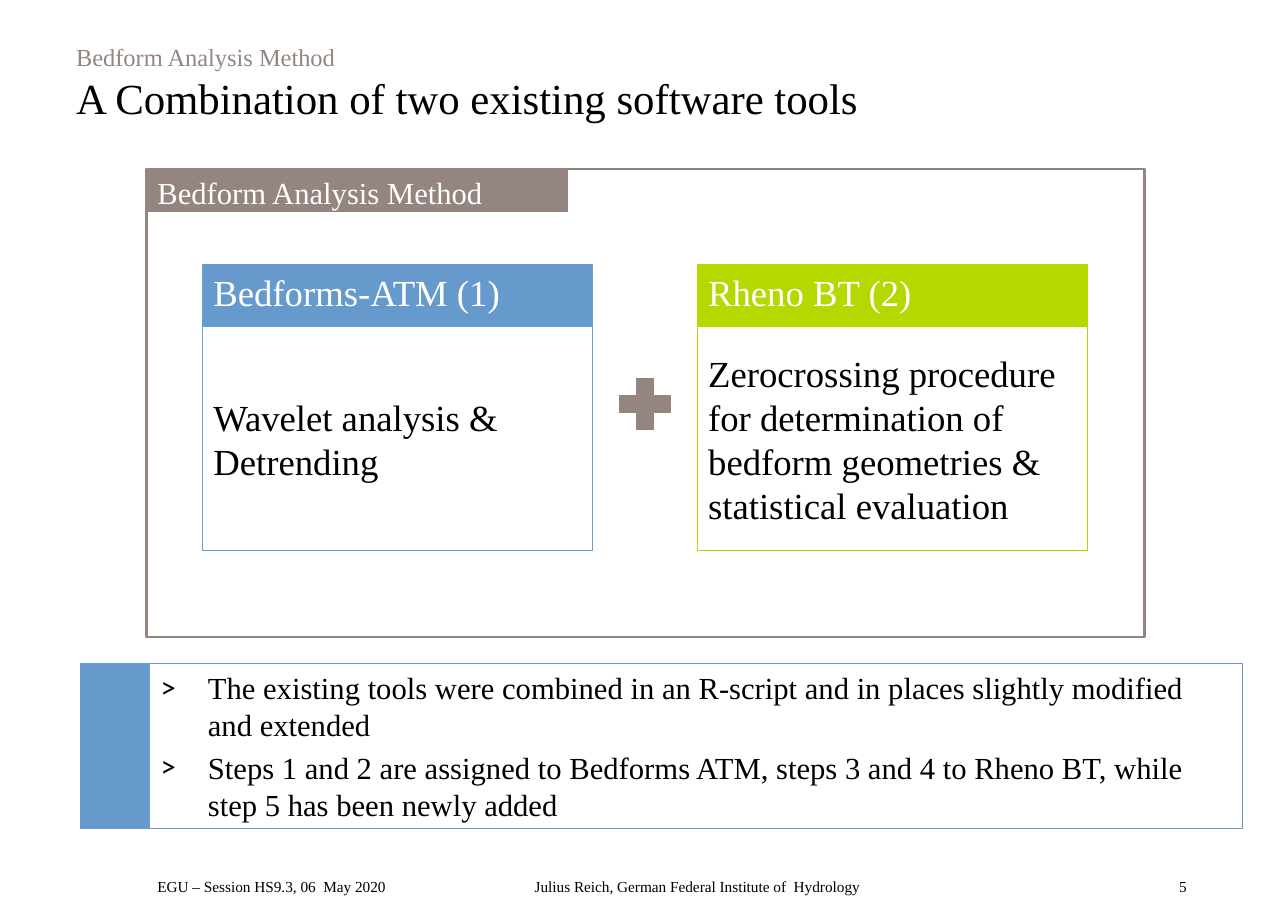
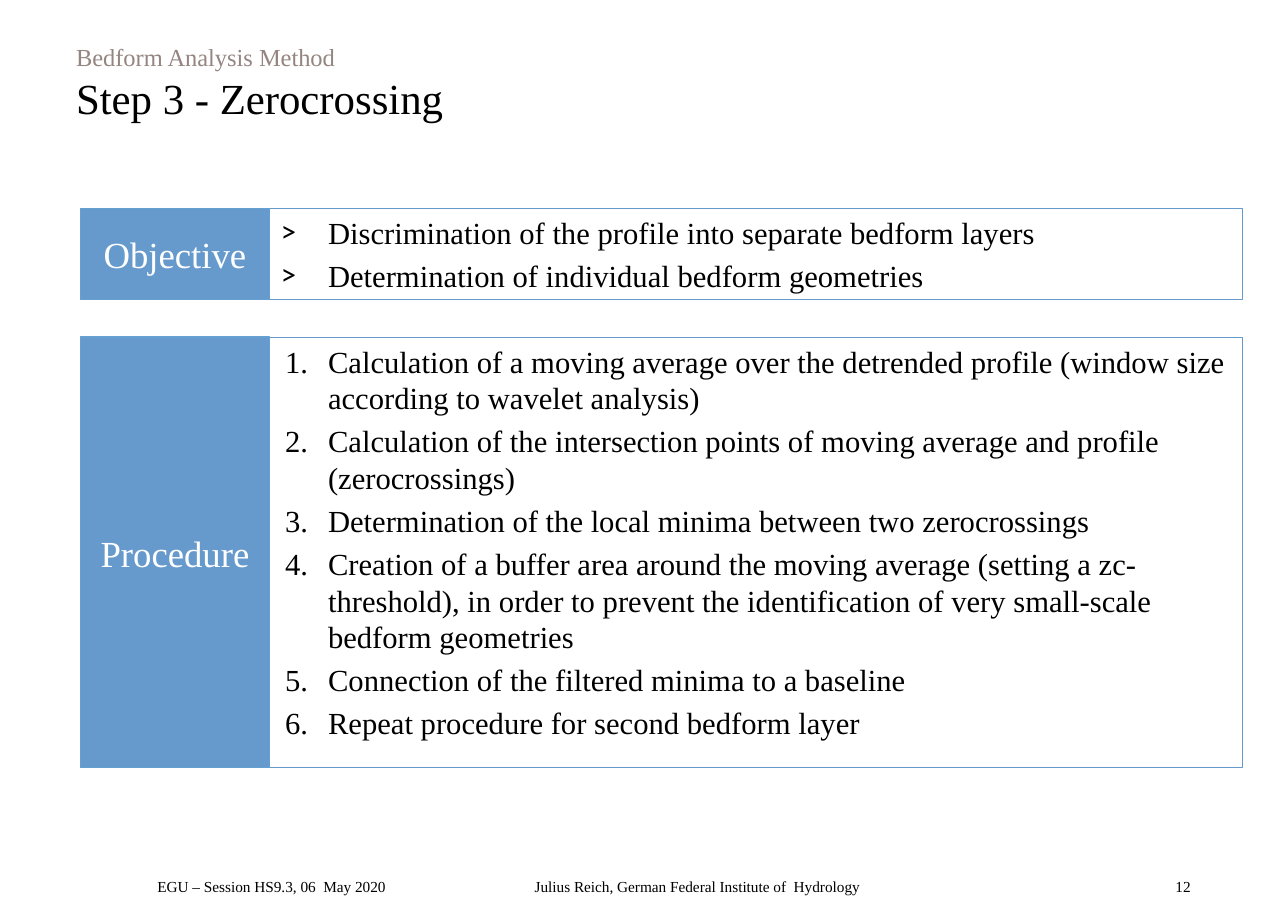
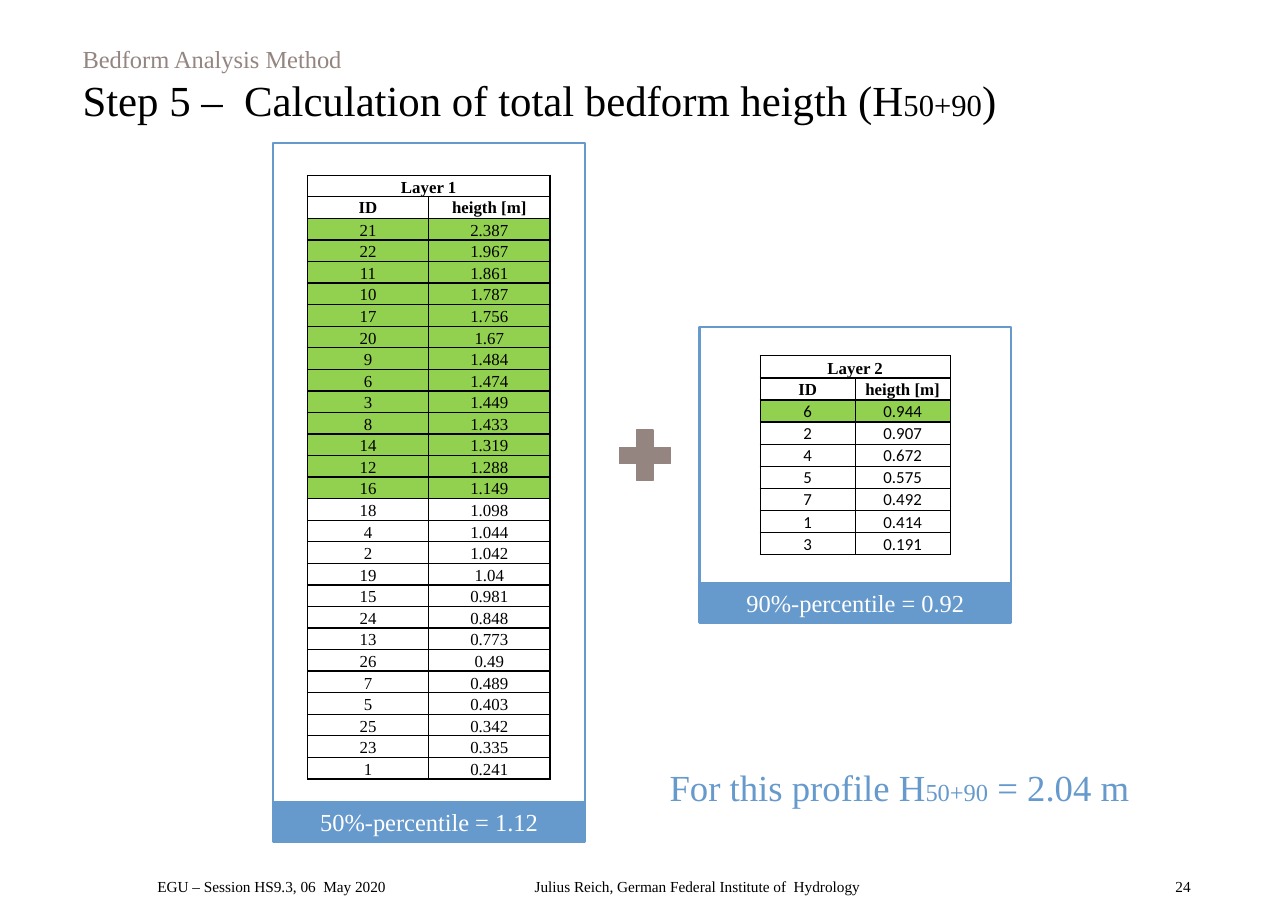
from dataclasses import dataclass

from lxml.etree import SubElement
from pptx import Presentation
from pptx.dml.color import RGBColor
from pptx.enum.shapes import MSO_SHAPE
from pptx.enum.text import MSO_ANCHOR, MSO_AUTO_SIZE, PP_ALIGN
from pptx.oxml.ns import qn
from pptx.util import Cm, Pt


@dataclass(frozen=True)
class Theme:
    serif: str = "Times New Roman"
    sans: str = "Calibri"
    black: str = "000000"
    white: str = "FFFFFF"
    taupe: str = "948580"
    blue: str = "6699CC"
    edge: str = "669FD1"
    lime: str = "B4D800"
    green: str = "92D050"
    head: int = 28
    large: int = 24
    text: int = 20
    small: int = 16
    cell: int = 11
    foot: int = 10


THEME = Theme()
TOPIC = "Bedform Analysis Method"
FOOTER = ("EGU – Session HS9.3, 06  May 2020\t"
          "Julius Reich, German Federal Institute of  Hydrology")
LEFT = 1.85
RIGHT = 28.65

LAYER_1 = [
    ("21", "2.387"), ("22", "1.967"), ("11", "1.861"), ("10", "1.787"),
    ("17", "1.756"), ("20", "1.67"), ("9", "1.484"), ("6", "1.474"),
    ("3", "1.449"), ("8", "1.433"), ("14", "1.319"), ("12", "1.288"),
    ("16", "1.149"), ("18", "1.098"), ("4", "1.044"), ("2", "1.042"),
    ("19", "1.04"), ("15", "0.981"), ("24", "0.848"), ("13", "0.773"),
    ("26", "0.49"), ("7", "0.489"), ("5", "0.403"), ("25", "0.342"),
    ("23", "0.335"), ("1", "0.241"),
]
LAYER_2 = [
    ("6", "0.944"), ("2", "0.907"), ("4", "0.672"), ("5", "0.575"),
    ("7", "0.492"), ("1", "0.414"), ("3", "0.191"),
]


def rgb(code):
    return RGBColor.from_string(code)


def style(par, size, color=THEME.black, face=THEME.serif, bold=False):
    font = par.font
    font.name, font.size, font.bold = face, Pt(size), bold
    font.color.rgb = rgb(color)


def write(par, parts, low):
    """Add the parts as runs; every second one is a suffix of size low."""
    for i, part in enumerate(parts):
        run = par.add_run()
        run.text = part
        if i % 2:
            run.font.size = Pt(low)


def place(shape, at):
    shape.left, shape.top, shape.width, shape.height = map(Cm, at)


def paint(shape, fill, line, width=0.75):
    if fill:
        shape.fill.solid()
        shape.fill.fore_color.rgb = rgb(fill)
    else:
        shape.fill.background()
    shape.line.color.rgb = rgb(line)
    shape.line.width = Pt(width)


def box(slide, at, fill, line, width=0.75, kind=MSO_SHAPE.RECTANGLE):
    shape = slide.shapes.add_shape(kind, *map(Cm, at))
    shape.shadow.inherit = False
    paint(shape, fill, line, width)
    return shape


def label(shape, text, size, color=THEME.white, align=PP_ALIGN.LEFT,
          anchor=MSO_ANCHOR.TOP):
    frame = shape.text_frame
    frame.word_wrap = True
    frame.vertical_anchor = anchor
    par = frame.paragraphs[0]
    par.text = text
    par.alignment = align
    style(par, size, color)


def plus(slide, top):
    box(slide, (14.07, top, 1.6, 1.6), THEME.taupe, THEME.taupe,
        kind=MSO_SHAPE.MATH_PLUS)


def note(slide, at, text, align, tab=None):
    """Add one footer text, with an optional tab stop."""
    frame = slide.shapes.add_textbox(*map(Cm, at)).text_frame
    frame.word_wrap = True
    frame.margin_left = frame.margin_right = Cm(0.28)
    frame.margin_top = frame.margin_bottom = Cm(0.15)
    par = frame.paragraphs[0]
    par.text = text
    par.alignment = align
    par.line_spacing = 0.9
    if tab:
        stops = SubElement(par._p.get_or_add_pPr(), qn("a:tabLst"))
        SubElement(stops, qn("a:tab"), pos=str(Cm(tab)), algn="l")
    style(par, THEME.foot)


def start(deck, layout, number, *head, left=1.5, top=0.84):
    """Add a slide with its title and footer."""
    slide = deck.slides.add_slide(deck.slide_layouts[layout])
    title = slide.shapes.title
    place(title, (left, top, 26.72, 3.5))
    frame = title.text_frame
    frame.auto_size = MSO_AUTO_SIZE.NONE
    frame.vertical_anchor = MSO_ANCHOR.TOP
    topic, main_line = frame.paragraphs[0], frame.add_paragraph()
    topic.text = TOPIC
    style(topic, THEME.small, THEME.taupe)
    write(main_line, head, THEME.text)
    style(main_line, THEME.head)
    for par in frame.paragraphs:
        par.alignment = PP_ALIGN.LEFT
    note(slide, (3.35, 20.12, 20.12, 1.04), FOOTER, PP_ALIGN.LEFT, tab=8.7)
    note(slide, (25.78, 20.12, 3, 1.07), str(number), PP_ALIGN.CENTER)
    return slide


def bullet(par, count):
    props = par._p.get_or_add_pPr()
    props.set("marL", str(Cm(1.09)))
    props.set("indent", str(Cm(-0.99 if count else -1.09)))
    if count:
        SubElement(props, qn("a:buFont"), typeface=THEME.serif)
        SubElement(props, qn("a:buAutoNum"), type="arabicPeriod")
    else:
        SubElement(props, qn("a:buFont"), typeface=THEME.sans)
        SubElement(props, qn("a:buChar"), char=">")


def panel(slide, index, top, height, side, items, name="", count=False,
          anchor=MSO_ANCHOR.TOP):
    """Fill a body placeholder with a list and set a blue side bar by it."""
    body = slide.placeholders[index]
    place(body, (LEFT + side, top, RIGHT - LEFT - side, height))
    paint(body, None, THEME.blue)
    frame = body.text_frame
    frame.auto_size = MSO_AUTO_SIZE.NONE
    frame.vertical_anchor = anchor
    for i, item in enumerate(items):
        par = frame.add_paragraph() if i else frame.paragraphs[0]
        par.text = item
        par.space_before = Pt(4 if i else 0)
        bullet(par, count)
        style(par, THEME.text)
    bar = box(slide, (LEFT, top, side, height), THEME.blue, THEME.edge)
    if name:
        label(bar, name, THEME.large, align=PP_ALIGN.CENTER,
              anchor=MSO_ANCHOR.MIDDLE)


def tool(slide, left, name, text, fill, line):
    top, width, head = 6.1, 9, 1.42
    label(box(slide, (left, top, width, head), fill, line), name, THEME.large)
    label(box(slide, (left, top + head, width, 5.18), None, line), text,
          THEME.large, THEME.black, anchor=MSO_ANCHOR.MIDDLE)


def border(cell):
    props = cell._tc.get_or_add_tcPr()
    for i, side in enumerate(("lnL", "lnR", "lnT", "lnB")):
        line = props.makeelement(qn("a:" + side), {"w": str(Pt(1))})
        fill = SubElement(line, qn("a:solidFill"))
        SubElement(fill, qn("a:srgbClr"), val=THEME.black)
        props.insert(i, line)


def grid(slide, left, top, width, step, name, data, marked, face):
    """Add a height table whose first marked data rows are green."""
    rows = [(name, ""), ("ID", "heigth [m]"), *data]
    table = slide.shapes.add_table(
        len(rows), 2, Cm(left), Cm(top), Cm(width), Cm(step * len(rows))).table
    table.first_row = table.horz_banding = False
    for r, row in enumerate(rows):
        table.rows[r].height = Cm(step)
        head = r < 2
        for c, text in enumerate(row):
            cell = table.cell(r, c)
            cell.margin_left = cell.margin_right = cell.margin_top = Cm(0.03)
            cell.margin_bottom = 0
            cell.vertical_anchor = (
                MSO_ANCHOR.MIDDLE if r == 1 else MSO_ANCHOR.BOTTOM)
            cell.fill.solid()
            green = 2 <= r < 2 + marked
            cell.fill.fore_color.rgb = rgb(THEME.green if green else THEME.white)
            border(cell)
            par = cell.text_frame.paragraphs[0]
            if text:
                par.text = text
            par.alignment = PP_ALIGN.CENTER
            style(par, THEME.cell, face=THEME.serif if head else face, bold=head)
    table.cell(0, 0).merge(table.cell(0, 1))


def card(slide, left, top, height, text):
    """Frame a table and close the frame with a blue result strip."""
    width = 7.19
    box(slide, (left, top, width, height), None, THEME.blue, 1.5)
    strip = box(slide, (left, top + height, width, 0.91),
                THEME.blue, THEME.blue, 1.5)
    label(strip, text, THEME.small, align=PP_ALIGN.CENTER)


def tools(deck):
    slide = start(deck, 1, 5, "A Combination of two existing software tools")
    left, top = 3.38, 3.89
    box(slide, (left, top, 23.01, 10.8), None, THEME.taupe, 1.5)
    tag = box(slide, (left, top, 9.7, 0.99), THEME.taupe, THEME.taupe)
    label(tag, TOPIC, THEME.text)
    tool(slide, 4.67, "Bedforms-ATM (1)", "Wavelet analysis & Detrending",
         THEME.blue, THEME.edge)
    tool(slide, 16.08, "Rheno BT (2)",
         "Zerocrossing procedure for determination of bedform geometries"
         " & statistical evaluation", THEME.lime, THEME.lime)
    plus(slide, 8.51)
    panel(slide, 1, 15.29, 3.81, 1.6, [
        "The existing tools were combined in an R-script and in places"
        " slightly modified and extended",
        "Steps 1 and 2 are assigned to Bedforms ATM, steps 3 and 4 to"
        " Rheno BT, while step 5 has been newly added",
    ], anchor=MSO_ANCHOR.MIDDLE)


def crossing(deck):
    slide = start(deck, 3, 12, "Step 3 - Zerocrossing")
    panel(slide, 1, 4.8, 2.11, 4.37, [
        "Discrimination of the profile into separate bedform layers",
        "Determination of individual bedform geometries",
    ], "Objective")
    panel(slide, 2, 7.77, 9.93, 4.37, [
        "Calculation of a moving average over the detrended profile"
        " (window size according to wavelet analysis)",
        "Calculation of the intersection points of moving average and"
        " profile (zerocrossings)",
        "Determination of the local minima between two zerocrossings",
        "Creation of a buffer area around the moving average (setting a"
        " zc-threshold), in order to prevent the identification of very"
        " small-scale bedform geometries",
        "Connection of the filtered minima to a baseline",
        "Repeat procedure for second bedform layer",
    ], "Procedure", count=True)


def total(deck):
    slide = start(deck, 5, 24, "Step 5 –  Calculation of total bedform heigth (H",
                  "50+90", ")", left=1.65, top=0.89)
    grid(slide, 7.09, 4.04, 5.59, 0.49, "Layer 1", LAYER_1, 13, THEME.serif)
    grid(slide, 17.53, 8.2, 4.38, 0.51, "Layer 2", LAYER_2, 1, THEME.sans)
    plus(slide, 9.7)
    card(slide, 6.3, 3.3, 15.19, "50%-percentile = 1.12")
    card(slide, 16.13, 7.54, 5.9, "90%-percentile = 0.92")
    result = slide.shapes.add_textbox(*map(Cm, (12.04, 17.5, 17.4, 1.27)))
    result.text_frame.word_wrap = True
    par = result.text_frame.paragraphs[0]
    write(par, ("For this profile H", "50+90", " = 2.04 m"), THEME.small)
    par.alignment = PP_ALIGN.CENTER
    style(par, THEME.large, THEME.blue)


def main():
    deck = Presentation()
    deck.slide_width, deck.slide_height = Cm(29.7), Cm(21)
    tools(deck)
    crossing(deck)
    total(deck)
    deck.save("out.pptx")


if __name__ == "__main__":
    main()
